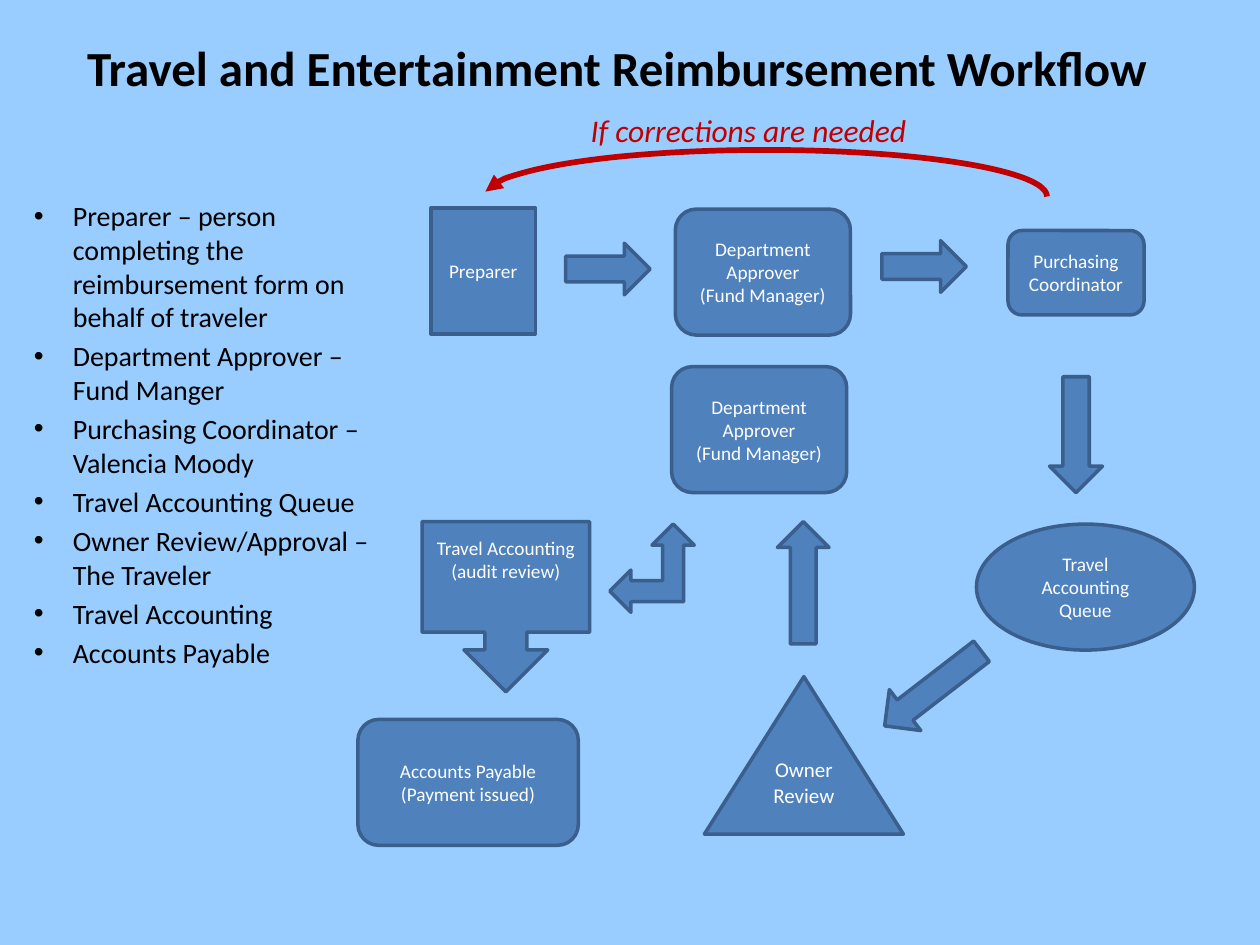
from lxml import etree
from pptx import Presentation
from pptx.dml.color import RGBColor
from pptx.enum.shapes import MSO_SHAPE
from pptx.enum.text import MSO_ANCHOR, PP_ALIGN
from pptx.oxml.ns import qn
from pptx.util import Inches, Pt

RECTANGLE = MSO_SHAPE.RECTANGLE
ROUNDED = MSO_SHAPE.ROUNDED_RECTANGLE
OVAL = MSO_SHAPE.OVAL
TRIANGLE = MSO_SHAPE.ISOSCELES_TRIANGLE
CALLOUT = MSO_SHAPE.DOWN_ARROW_CALLOUT
RIGHT_ARROW = MSO_SHAPE.RIGHT_ARROW
DOWN_ARROW = MSO_SHAPE.DOWN_ARROW
LEFT_UP_ARROW = MSO_SHAPE.LEFT_UP_ARROW
ARC = MSO_SHAPE.ARC
CENTER, LEFT = PP_ALIGN.CENTER, PP_ALIGN.LEFT

FONT = "Calibri"
COLORS = {
    "background": "99CCFF",
    "step": "4F81BD",
    "outline": "3A5F8C",
    "step_text": "FFFFFF",
    "text": "000000",
    "correction": "C00000",
}

ROLES = [
    "Preparer – person completing the reimbursement form on behalf of traveler",
    "Department Approver – Fund Manger",
    "Purchasing Coordinator – Valencia Moody",
    "Travel Accounting Queue",
    "Owner Review/Approval – The Traveler",
    "Travel Accounting",
    "Accounts Payable",
]

APPROVER = ["Department Approver", "(Fund Manager)"]

# Kind, position and size, paragraphs, text size, bottom inset
STEPS = [
    (RECTANGLE, (3.42, 1.65, 0.83, 1), ["Preparer"], 11, 0.05),
    (ROUNDED, (5.36, 1.66, 1.39, 1), APPROVER, 11, 0.05),
    (ROUNDED, (8, 1.83, 1.08, 0.67), ["Purchasing Coordinator"], 11, 0.05),
    (OVAL, (7.75, 4.16, 1.73, 1), ["Travel Accounting Queue"], 11, 0.05),
    (TRIANGLE, (5.59, 5.37, 1.58, 1.25), ["Owner Review"], 12, 0.25),
    (ROUNDED, (5.33, 2.91, 1.39, 1), APPROVER, 11, 0.05),
    (CALLOUT, (3.35, 4.14, 1.33, 1.35),
     ["Travel Accounting (audit review)"], 11, 0.33),
    (ROUNDED, (2.84, 5.71, 1.75, 1),
     ["Accounts Payable", "(Payment issued)"], 11, 0.05),
]

# Kind, position and size, rotation
ARROWS = [
    (RIGHT_ARROW, (4.49, 1.93, 0.67, 0.41), 0),
    (RIGHT_ARROW, (7, 1.91, 0.67, 0.41), 0),
    (DOWN_ARROW, (8.33, 2.99, 0.42, 0.92), 0),
    (RIGHT_ARROW, (6.92, 5.26, 0.97, 0.41), 142.4),
    (RIGHT_ARROW, (5.89, 4.42, 0.97, 0.41), 270),
    (LEFT_UP_ARROW, (4.84, 4.16, 0.67, 0.7), 0),
]


def color(name):
    return RGBColor.from_string(COLORS[name])


def inches(box):
    return [Inches(length) for length in box]


def write(text_frame, lines, size, color_name, align, bold=False, italic=False):
    """Fill a text frame with one paragraph per line."""
    text_frame.word_wrap = True
    for index, line in enumerate(lines):
        paragraph = text_frame.add_paragraph() if index else text_frame.paragraphs[0]
        paragraph.alignment = align
        run = paragraph.add_run()
        run.text = line
        run.font.name = FONT
        run.font.size = Pt(size)
        run.font.bold = bold
        run.font.italic = italic
        run.font.color.rgb = color(color_name)


def add_text(slide, box, lines, size, color_name, align=LEFT, **style):
    text_frame = slide.shapes.add_textbox(*inches(box)).text_frame
    write(text_frame, lines, size, color_name, align, **style)
    return text_frame


def add_bullets(slide, box, lines, size):
    text_frame = add_text(slide, box, lines, size, "text")
    for paragraph in text_frame.paragraphs:
        paragraph.space_before = Pt(0.2 * size)
        properties = paragraph._p.get_or_add_pPr()
        properties.set("marL", str(Inches(0.31)))
        properties.set("indent", str(Inches(-0.31)))
        font = etree.SubElement(properties, qn("a:buFont"))
        font.set("typeface", "Arial")
        bullet = etree.SubElement(properties, qn("a:buChar"))
        bullet.set("char", "•")


def add_block(slide, kind, box):
    """Add a filled and outlined workflow shape."""
    shape = slide.shapes.add_shape(kind, *inches(box))
    shape.shadow.inherit = False
    shape.fill.solid()
    shape.fill.fore_color.rgb = color("step")
    shape.line.color.rgb = color("outline")
    shape.line.width = Pt(2)
    return shape


def add_step(slide, kind, box, lines, size, bottom_inset):
    text_frame = add_block(slide, kind, box).text_frame
    text_frame.vertical_anchor = MSO_ANCHOR.MIDDLE
    text_frame.margin_bottom = Inches(bottom_inset)
    write(text_frame, lines, size, "step_text", CENTER)


def add_return_arc(slide, box):
    """Add the curved arrow that leads back to the preparer."""
    arc = slide.shapes.add_shape(ARC, *inches(box))
    arc.shadow.inherit = False
    arc.adjustments[0] = 108.6
    arc.adjustments[1] = 0
    arc.fill.background()
    arc.line.color.rgb = color("correction")
    arc.line.width = Pt(3.25)
    head = etree.SubElement(arc.line._get_or_add_ln(), qn("a:headEnd"))
    head.set("type", "triangle")


def main():
    presentation = Presentation()
    presentation.slide_width = Inches(10)
    presentation.slide_height = Inches(7.5)
    slide = presentation.slides.add_slide(presentation.slide_layouts[6])
    slide.background.fill.solid()
    slide.background.fill.fore_color.rgb = color("background")

    # Title and list of roles
    add_text(slide, (0.33, 0.25, 9.13, 0.57),
             ["Travel and Entertainment Reimbursement Workflow"],
             28, "text", CENTER, bold=True)
    add_bullets(slide, (0.17, 1.53, 3.08, 5.13), ROLES, 16)

    # Workflow
    for step in STEPS:
        add_step(slide, *step)
    for kind, box, rotation in ARROWS:
        add_block(slide, kind, box).rotation = rotation

    # Correction loop
    add_return_arc(slide, (3.84, 1.19, 4.47, 0.74))
    add_text(slide, (4.59, 0.83, 3.33, 0.4), ["If corrections are needed"],
             18, "correction", italic=True)

    presentation.save("out.pptx")


if __name__ == "__main__":
    main()
